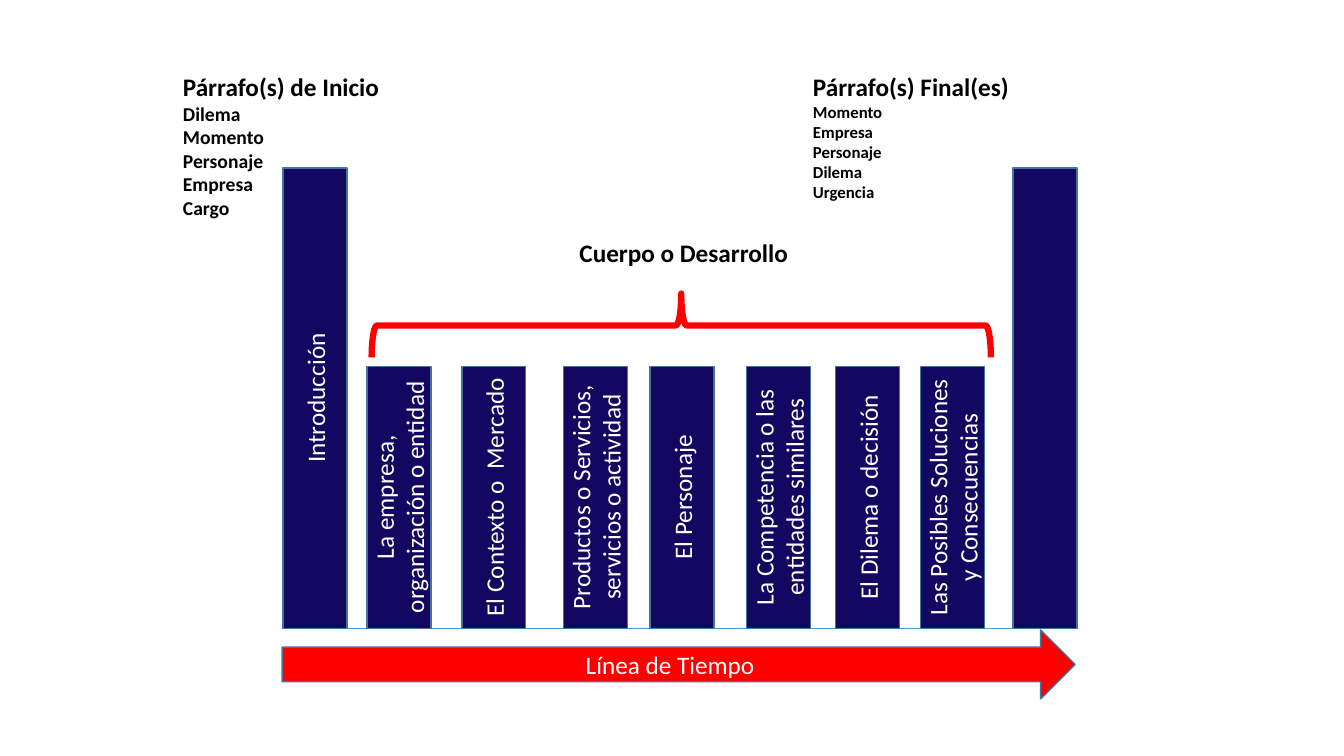
import pptx
import pptx.dml.color
import pptx.enum.shapes
import pptx.enum.text
import pptx.util
from dataclasses import dataclass


@dataclass(frozen=True)
class Theme:
    font: str = "Calibri"
    heading: int = 18
    opening_list: int = 14
    closing_list: int = 12
    navy: str = "140761"
    outline: str = "43739E"
    baseline: str = "5B9BD5"
    red: str = "FF0000"
    white: str = "FFFFFF"
    black: str = "000000"


theme = Theme()
rgb = pptx.dml.color.RGBColor.from_string
Shape = pptx.enum.shapes.MSO_SHAPE

deck = pptx.Presentation()
deck.slide_width = pptx.util.Inches(13.33)
deck.slide_height = pptx.util.Inches(7.5)
slide = deck.slides.add_slide(deck.slide_layouts[6])

# The slide is a grid of 16 columns by 9 rows
COLUMN = deck.slide_width / 16
ROW = deck.slide_height / 9
GROUND = 7.48
BAR_WIDTH = 0.76
PILLAR_HEIGHT = 5.48
TOPIC_HEIGHT = 3.12


def add_block(kind, left, top, width, height, fill, line, weight=1):
    """Add a preset shape, or a text box if kind is None, placed in grid units."""
    place = [int(left * COLUMN), int(top * ROW), int(width * COLUMN), int(height * ROW)]
    if kind is None:
        block = slide.shapes.add_textbox(*place)
    else:
        block = slide.shapes.add_shape(kind, *place)
        block.shadow.inherit = False
        block.line.color.rgb = rgb(line)
        block.line.width = pptx.util.Pt(weight)
        if fill:
            block.fill.solid()
            block.fill.fore_color.rgb = rgb(fill)
        else:
            block.fill.background()
    block.text_frame.word_wrap = True
    return block


def write(block, lines, sizes, color, bold=False, centred=False):
    """Fill a block with one paragraph per line; the last size goes on to the end."""
    block.text_frame.text = "\n".join(lines)
    for index, paragraph in enumerate(block.text_frame.paragraphs):
        if centred:
            paragraph.alignment = pptx.enum.text.PP_ALIGN.CENTER
        font = paragraph.runs[0].font
        font.name = theme.font
        font.size = pptx.util.Pt(sizes[min(index, len(sizes) - 1)])
        font.bold = bold
        font.color.rgb = rgb(color)


# Ground line under all bars
ground = slide.shapes.add_connector(
    pptx.enum.shapes.MSO_CONNECTOR.STRAIGHT,
    int(3.37 * COLUMN), int(GROUND * ROW), int(12.82 * COLUMN), int(GROUND * ROW))
ground.line.color.rgb = rgb(theme.baseline)
ground.line.width = pptx.util.Pt(0.5)
ground.element.spPr.append(pptx.oxml.parse_xml(
    '<a:effectLst xmlns:a="http://schemas.openxmlformats.org/drawingml/2006/main"/>'))

# Two tall pillars with the topics of the body between them
bars = [
    (3.37, PILLAR_HEIGHT, "Introducción"),
    (4.37, TOPIC_HEIGHT, "La empresa, organización o entidad"),
    (5.5, TOPIC_HEIGHT, "El Contexto o  Mercado"),
    (6.71, TOPIC_HEIGHT, "Productos o Servicios, servicios o actividad"),
    (7.74, TOPIC_HEIGHT, "El Personaje"),
    (8.89, TOPIC_HEIGHT, "La Competencia o las entidades similares"),
    (9.95, TOPIC_HEIGHT, "El Dilema o decisión"),
    (10.96, TOPIC_HEIGHT, "Las Posibles Soluciones y Consecuencias"),
    (12.06, PILLAR_HEIGHT, None),
]
for left, height, topic in bars:
    bar = add_block(Shape.RECTANGLE, left, GROUND - height, BAR_WIDTH, height,
                    theme.navy, theme.outline)
    if topic:
        write(bar, [topic], [theme.heading], theme.white, centred=True)
        bar.text_frame.vertical_anchor = pptx.enum.text.MSO_ANCHOR.MIDDLE
        bar.text_frame._txBody.bodyPr.set("vert", "vert270")

# Headings and their lists
captions = [
    (2.06, 0.79, 2.7, 2.18, theme.opening_list,
     ["Párrafo(s) de Inicio", "Dilema", "Momento", "Personaje", "Empresa", "Cargo"]),
    (9.56, 0.79, 3.16, 1.69, theme.closing_list,
     ["Párrafo(s) Final(es)", "Momento", "Empresa", "Personaje", "Dilema", "Urgencia"]),
    (6.78, 2.77, 3.16, 0.48, theme.heading, ["Cuerpo o Desarrollo"]),
]
for left, top, width, height, list_size, lines in captions:
    caption = add_block(None, left, top, width, height, None, None)
    write(caption, lines, [theme.heading, list_size], theme.black, bold=True)

# Brace over the body, turned to point upwards
brace = add_block(Shape.RIGHT_BRACE, 7.73, 0.19, BAR_WIDTH, 7.37, None, theme.red, 4.5)
brace.rotation = 270
brace.element.spPr.get_or_add_xfrm().set("flipV", "1")

timeline = add_block(Shape.RIGHT_ARROW, 3.36, 7.5, 9.44, 0.82, theme.red, theme.outline)
write(timeline, ["Línea de Tiempo"], [theme.heading], theme.white, centred=True)
timeline.text_frame.vertical_anchor = pptx.enum.text.MSO_ANCHOR.MIDDLE

deck.save("out.pptx")
